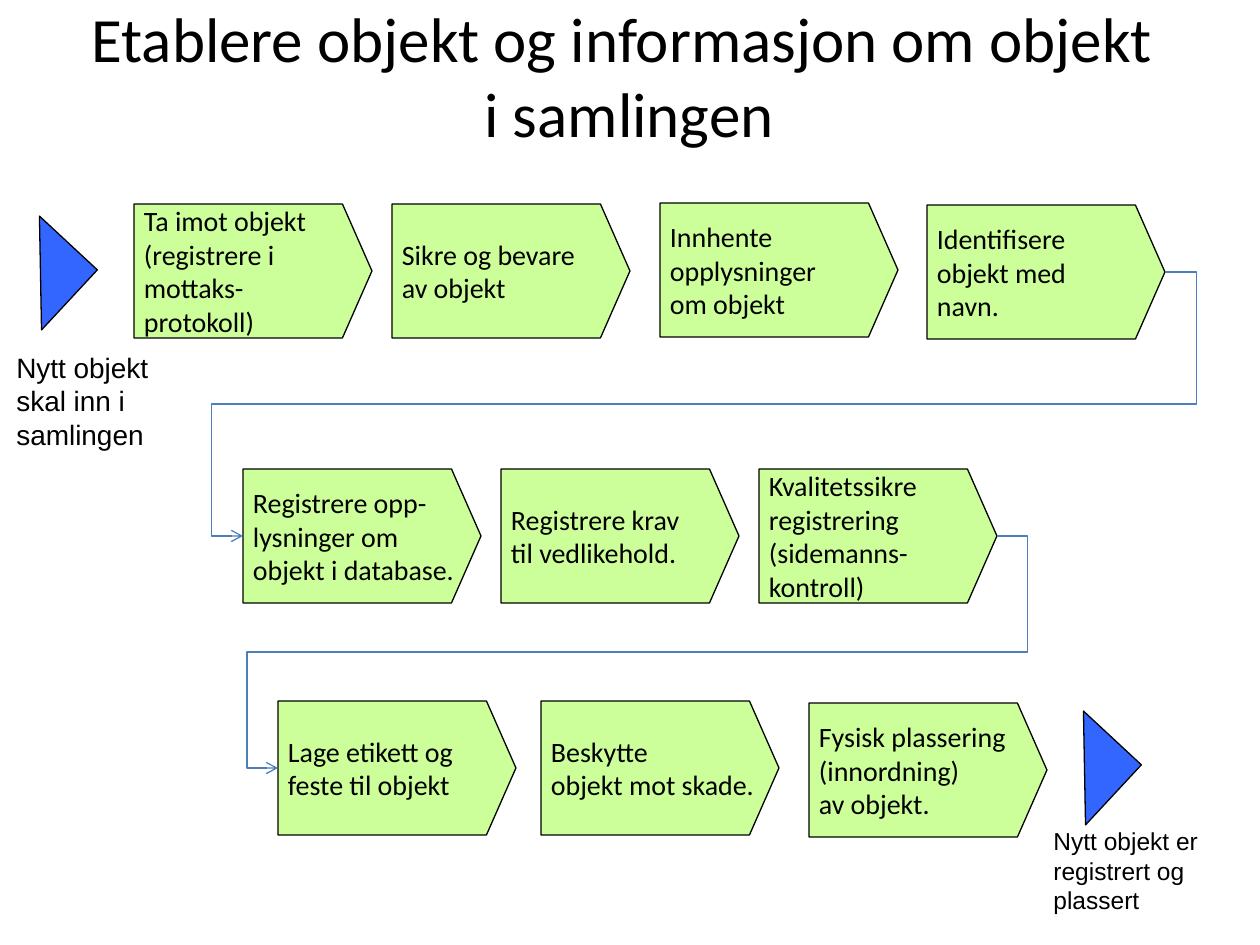
from dataclasses import dataclass

from lxml import etree
from pptx import Presentation
from pptx.dml.color import RGBColor
from pptx.enum.shapes import MSO_CONNECTOR, MSO_SHAPE
from pptx.enum.text import MSO_ANCHOR, MSO_AUTO_SIZE, PP_ALIGN
from pptx.oxml.ns import qn
from pptx.util import Emu, Pt

PLATE, TRIANGLE = MSO_SHAPE.PENTAGON, MSO_SHAPE.RIGHT_TRIANGLE
ELBOW = MSO_CONNECTOR.ELBOW
LEFT, CENTER = PP_ALIGN.LEFT, PP_ALIGN.CENTER
TOP, MIDDLE = MSO_ANCHOR.TOP, MSO_ANCHOR.MIDDLE
GROW, NO_FIT = MSO_AUTO_SIZE.SHAPE_TO_FIT_TEXT, MSO_AUTO_SIZE.NONE
LEFT_SITE, RIGHT_SITE = 1, 3
SLIDE_W, SLIDE_H = 1260, 945
PLATE_W, PLATE_H = 238, 134
TRIANGLE_W, TRIANGLE_H = 79, 82
DETOUR = 31  # how far a connector runs past the plates
COLORS = {"step": "CCFF99", "marker": "3366FF", "outline": "000000",
          "text": "000000", "connector": "4B7EBC"}


@dataclass
class Step:
    x: int
    y: int
    lines: list[str]


@dataclass
class Marker:
    x: int
    y: int


@dataclass
class Label:
    x: int
    y: int
    w: int
    h: int
    size: int
    text: str


ROWS = [
    [Step(134, 204, ["Ta imot objekt (registrere i mottaks-protokoll)"]),
     Step(392, 204, ["Sikre og bevare", "av objekt"]),
     Step(660, 203, ["Innhente opplysninger", "om objekt"]),
     Step(927, 205, ["Identifisere objekt med", "navn."])],
    [Step(243, 469, ["Registrere opp-lysninger om objekt i database."]),
     Step(501, 469, ["Registrere krav", "til vedlikehold."]),
     Step(759, 469, ["Kvalitetssikre registrering (sidemanns-kontroll)"])],
    [Step(278, 701, ["Lage etikett og feste til objekt"]),
     Step(541, 701, ["Beskytte", "objekt mot skade."]),
     Step(809, 703, ["Fysisk plassering (innordning)", "av objekt."])],
]
MARKERS = [Marker(1, 232), Marker(1045, 727)]
LABELS = [
    Label(4, 344, 164, 115, 16, "Nytt objekt skal inn i samlingen"),
    Label(1041, 820, 173, 102, 14, "Nytt objekt er registrert og plassert"),
]
TITLE = ["Etablere objekt og informasjon om objekt ", "i samlingen"]


def px(n: int) -> Emu:
    return Emu(round(n * 914400 / 126))


def box(x: int, y: int, w: int, h: int) -> list[Emu]:
    return [px(n) for n in (x, y, w, h)]


def rgb(name: str) -> RGBColor:
    return RGBColor.from_string(COLORS[name])


def set_format(obj, values: dict) -> None:
    for name, value in values.items():
        setattr(obj, name, value)


def add_run(p, text: str, size: int, font: str) -> None:
    r = p.add_run()
    r.text = text
    set_format(r.font, {"size": Pt(size), "name": font})
    r.font.color.rgb = rgb("text")


def add_shape(s, kind, bounds: list[Emu], fill: str):
    sp = s.shapes.add_shape(kind, *bounds)
    sp.shadow.inherit = False
    sp.fill.solid()
    sp.fill.fore_color.rgb = rgb(fill)
    sp.line.color.rgb = rgb("outline")
    sp.line.width = Pt(0.75)
    return sp


def add_step(s, step: Step):
    sp = add_shape(s, PLATE, box(step.x, step.y, PLATE_W, PLATE_H), "step")
    sp.adjustments[0] = 0.22
    tf = sp.text_frame
    set_format(tf, {"word_wrap": True, "vertical_anchor": MIDDLE,
                    "margin_left": px(10), "margin_right": px(10),
                    "margin_top": px(5), "margin_bottom": px(5)})
    for i, line in enumerate(step.lines):
        p = tf.add_paragraph() if i else tf.paragraphs[0]
        p.alignment = LEFT
        add_run(p, line, 16, "Calibri")
    return sp


def add_marker(s, marker: Marker) -> None:
    bounds = box(marker.x, marker.y, TRIANGLE_W, TRIANGLE_H)
    add_shape(s, TRIANGLE, bounds, "marker").rotation = 222.9


def add_label(s, label: Label) -> None:
    sp = s.shapes.add_textbox(*box(label.x, label.y, label.w, label.h))
    tf = sp.text_frame
    set_format(tf, {"word_wrap": True, "auto_size": GROW, "vertical_anchor": TOP})
    add_run(tf.paragraphs[0], label.text, label.size, "Arial")


def add_row_link(s, start, end) -> None:
    """Lead from the last step of a row back to the first step of the next."""
    cn = s.shapes.add_connector(ELBOW, 0, 0, 0, 0)
    cn.begin_connect(start, RIGHT_SITE)
    cn.end_connect(end, LEFT_SITE)
    cn.line.color.rgb = rgb("connector")
    cn.line.width = Pt(0.75)
    sp_pr = cn._element.spPr
    geom = sp_pr.find(qn("a:prstGeom"))
    geom.set("prst", "bentConnector5")
    guides = geom.find(qn("a:avLst"))
    if guides is None:
        guides = etree.SubElement(geom, qn("a:avLst"))
    out = round(100000 * px(DETOUR) / cn.width)
    for i, value in enumerate((-out, 50000, 100000 + out), 1):
        etree.SubElement(guides, qn("a:gd"), name=f"adj{i}", fmla=f"val {value}")
    etree.SubElement(sp_pr.find(qn("a:ln")), qn("a:tailEnd"), type="arrow")
    etree.SubElement(sp_pr, qn("a:effectLst"))


def add_title(s) -> None:
    sp = s.shapes.title
    bounds = box(62, -4, 1134, 158)
    set_format(sp, dict(zip(("left", "top", "width", "height"), bounds)))
    tf = sp.text_frame
    set_format(tf, {"word_wrap": True, "auto_size": NO_FIT, "vertical_anchor": MIDDLE})
    p = tf.paragraphs[0]
    p.alignment = CENTER
    for i, line in enumerate(TITLE):
        if i:
            p.add_line_break()
        add_run(p, line, 36, "Calibri")


def main() -> None:
    prs = Presentation()
    prs.slide_width, prs.slide_height = px(SLIDE_W), px(SLIDE_H)
    s = prs.slides.add_slide(prs.slide_layouts[5])  # title only
    add_title(s)

    # Process steps, row by row
    rows = [[add_step(s, step) for step in row] for row in ROWS]

    # Start and end markers with their labels
    for marker in MARKERS:
        add_marker(s, marker)
    for label in LABELS:
        add_label(s, label)

    # Connectors between rows
    for row, following in zip(rows, rows[1:]):
        add_row_link(s, row[-1], following[0])
    prs.save("out.pptx")


if __name__ == "__main__":
    main()
